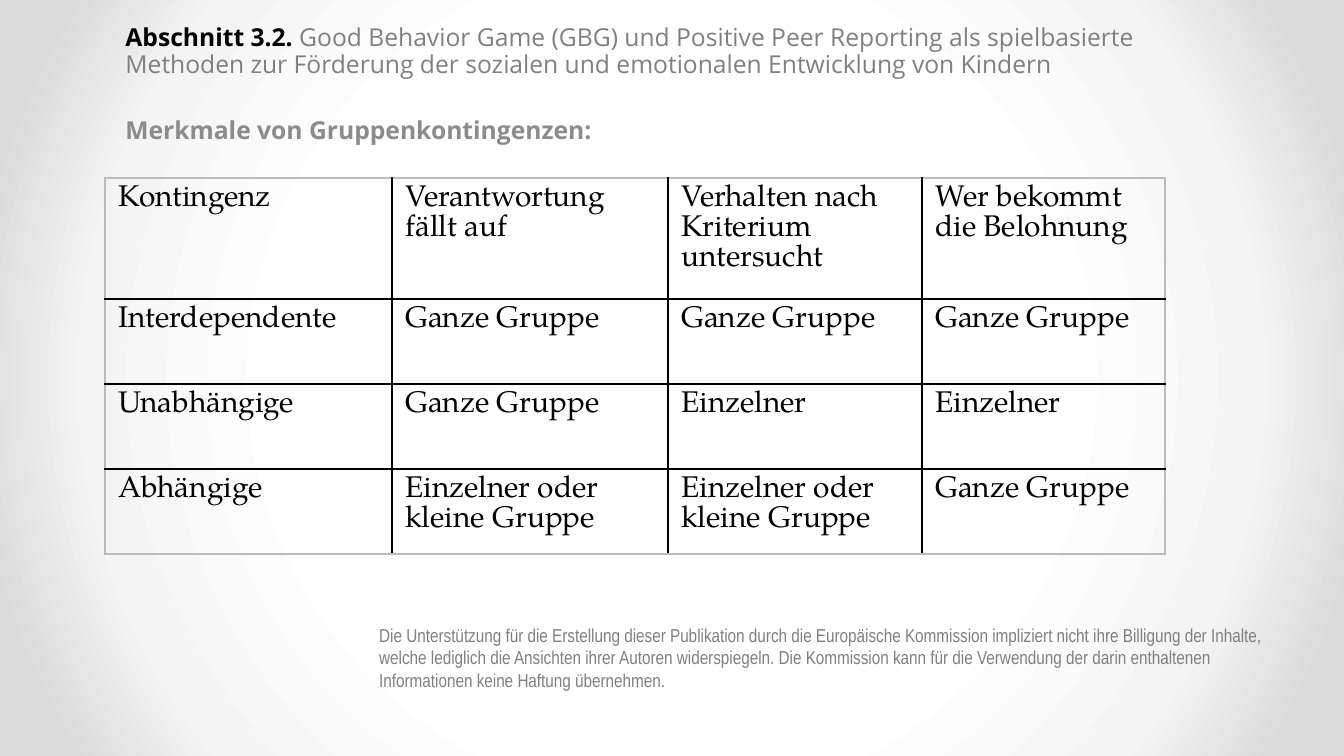
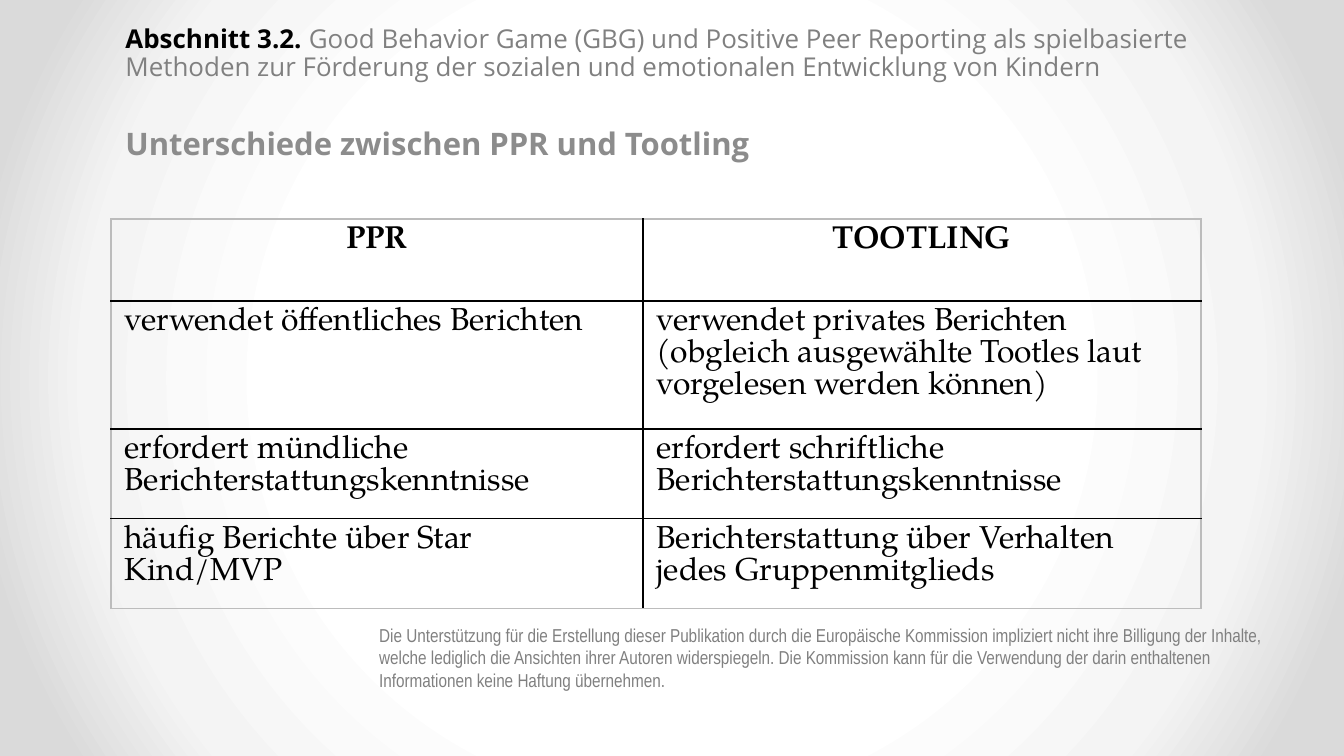
from dataclasses import dataclass

from lxml import etree
from pptx import Presentation
from pptx import util as u
from pptx.dml.color import RGBColor
from pptx.enum import text
from pptx.oxml import ns

PX = 9144000 / 1344  # EMU per px
WIDTH, HEIGHT = 1344, 756

BLACK, GREY, HEADING_GREY, FRAME_GREY = "000000", "808080", "8C8C8C", "BCBCBC"
BACKDROP = ((50, "FFFFFF"), (76, "F4F4F4"), (92, "DADADA"))
TITLE_FONT, TABLE_FONT, FOOTER_FONT = "Open Sans", "TeX Gyre Pagella", "Arial Narrow"

SECTION = "Abschnitt 3.2. "
TOPIC = ("Good Behavior Game (GBG) und Positive Peer Reporting als spielbasierte "
         "Methoden zur Förderung der sozialen und emotionalen Entwicklung von Kindern")
DISCLAIMER = (
    "Die Unterstützung für die Erstellung dieser Publikation durch die Europäische "
    "Kommission impliziert nicht ihre Billigung der Inhalte, welche lediglich die "
    "Ansichten ihrer Autoren widerspiegeln. Die Kommission kann für die Verwendung der "
    "darin enthaltenen Informationen keine Haftung übernehmen.")


@dataclass(frozen=True)
class Box:
    left: int
    top: int
    width: int
    height: int

    def emu(self) -> tuple:
        return tuple(px(v) for v in (self.left, self.top, self.width, self.height))


@dataclass(frozen=True)
class Comparison:
    """One slide: section title, heading and a comparison table."""
    title_box: Box
    topic_size: float
    heading: str
    heading_size: float
    heading_gap: int
    table_left: int
    table_top: int
    columns: tuple
    row_heights: tuple
    cell_size: int
    rows: tuple
    centred_header: bool = False


FOOTER_BOX = Box(366, 617, 931, 90)

CONTINGENCIES = Comparison(
    title_box=Box(112, 19, 1079, 142), topic_size=13.2,
    heading="Merkmale von Gruppenkontingenzen:", heading_size=13.2, heading_gap=21,
    table_left=105, table_top=178,
    columns=(287, 276, 254, 243), row_heights=(121, 85, 85, 85), cell_size=16,
    rows=(
        ("Kontingenz", "Verantwortung fällt auf",
         "Verhalten nach Kriterium untersucht", "Wer bekommt die Belohnung"),
        ("Interdependente", "Ganze Gruppe", "Ganze Gruppe", "Ganze Gruppe"),
        ("Unabhängige", "Ganze Gruppe", "Einzelner", "Einzelner"),
        ("Abhängige", "Einzelner oder kleine Gruppe",
         "Einzelner oder kleine Gruppe", "Ganze Gruppe"),
    ))

TOOTLING = Comparison(
    title_box=Box(112, 19, 1101, 180), topic_size=13.9,
    heading="Unterschiede zwischen PPR und Tootling", heading_size=16.6, heading_gap=25,
    table_left=111, table_top=219,
    columns=(532, 558), row_heights=(82, 128, 89, 90), cell_size=17,
    rows=(
        ("PPR", "TOOTLING"),
        ("verwendet öffentliches Berichten",
         "verwendet privates Berichten (obgleich ausgewählte Tootles laut "
         "vorgelesen werden können)"),
        ("erfordert mündliche Berichterstattungskenntnisse",
         "erfordert schriftliche Berichterstattungskenntnisse"),
        ("häufig Berichte über Star Kind/MVP",
         "Berichterstattung über Verhalten jedes Gruppenmitglieds"),
    ),
    centred_header=True)


def px(value: float) -> int:
    return round(value * PX)


def rgb(color: str) -> RGBColor:
    return RGBColor.from_string(color)


def child(parent, tag: str, **attributes):
    return etree.SubElement(parent, ns.qn(tag), {k: str(v) for k, v in attributes.items()})


def write(paragraph, words: str, *, size: float, font: str, color: str = BLACK,
          bold: bool = False, align=text.PP_ALIGN.LEFT) -> None:
    """Append a formatted run to a paragraph."""
    paragraph.alignment = align
    run = paragraph.add_run()
    run.text = words
    run.font.size = u.Pt(size)
    run.font.name = font
    run.font.bold = bold
    run.font.color.rgb = rgb(color)


# Shared background: white centre fading to grey
def paint_background(master) -> None:
    fill = master.background.fill
    fill.solid()
    properties = master.element.cSld.find(ns.qn("p:bg")).find(ns.qn("p:bgPr"))
    properties.remove(properties.find(ns.qn("a:solidFill")))
    gradient = child(properties, "a:gradFill", rotWithShape=1)
    properties.insert(0, gradient)
    stops = child(gradient, "a:gsLst")
    for position, color in BACKDROP:
        child(child(stops, "a:gs", pos=position * 1000), "a:srgbClr", val=color)
    circle = child(gradient, "a:path", **{"path": "circle"})
    child(circle, "a:fillToRect", l=50000, t=50000, r=50000, b=50000)


# Section title with the slide heading below it
def draw_title(slide, page: Comparison) -> None:
    title = slide.shapes.title
    title.left, title.top, title.width, title.height = page.title_box.emu()
    frame = title.text_frame
    frame.word_wrap = True
    frame.auto_size = text.MSO_AUTO_SIZE.NONE
    frame.vertical_anchor = text.MSO_ANCHOR.TOP
    section, heading = frame.paragraphs[0], frame.add_paragraph()
    section.line_spacing = heading.line_spacing = 0.9
    section.space_before = u.Pt(0)
    heading.space_before = u.Pt(page.heading_gap)
    write(section, SECTION, size=page.topic_size, font=TITLE_FONT, bold=True)
    write(section, TOPIC, size=page.topic_size, font=TITLE_FONT, color=GREY)
    write(heading, page.heading, size=page.heading_size, font=TITLE_FONT,
          color=HEADING_GREY, bold=True)


def draw_footer(slide) -> None:
    frame = slide.shapes.add_textbox(*FOOTER_BOX.emu()).text_frame
    frame.word_wrap = True
    write(frame.paragraphs[0], DISCLAIMER, size=10, font=FOOTER_FONT, color=GREY)


def set_borders(cell, colors: dict) -> None:
    """Give each cell side a 1 pt line; lines precede the fill."""
    properties = cell._tc.get_or_add_tcPr()
    for index, (side, color) in enumerate(colors.items()):
        line = child(properties, f"a:{side}", w=u.Pt(1))
        child(child(line, "a:solidFill"), "a:srgbClr", val=color)
        properties.insert(index, line)


# Comparison table: black inner rules, grey frame
def draw_table(slide, page: Comparison) -> None:
    row_count, column_count = len(page.rows), len(page.columns)
    area = Box(page.table_left, page.table_top, sum(page.columns), sum(page.row_heights))
    table = slide.shapes.add_table(row_count, column_count, *area.emu()).table
    table.first_row = table.horz_banding = False
    for column, width in zip(table.columns, page.columns):
        column.width = px(width)
    for r, (height, entries) in enumerate(zip(page.row_heights, page.rows)):
        table.rows[r].height = px(height)
        header = page.centred_header and r == 0
        for c, entry in enumerate(entries):
            cell = table.cell(r, c)
            cell.fill.background()
            edges = {"lnL": c == 0, "lnR": c == column_count - 1,
                     "lnT": r == 0, "lnB": r == row_count - 1}
            set_borders(cell, {side: FRAME_GREY if outer else BLACK
                               for side, outer in edges.items()})
            write(cell.text_frame.paragraphs[0], entry, size=page.cell_size,
                  font=TABLE_FONT, bold=header,
                  align=text.PP_ALIGN.CENTER if header else text.PP_ALIGN.LEFT)


def main() -> None:
    prs = Presentation()
    prs.slide_width, prs.slide_height = px(WIDTH), px(HEIGHT)
    paint_background(prs.slide_master)
    title_only = prs.slide_layouts[5]
    for page in (CONTINGENCIES, TOOTLING):
        slide = prs.slides.add_slide(title_only)
        draw_title(slide, page)
        draw_footer(slide)
        draw_table(slide, page)
    prs.save("out.pptx")


if __name__ == "__main__":
    main()
